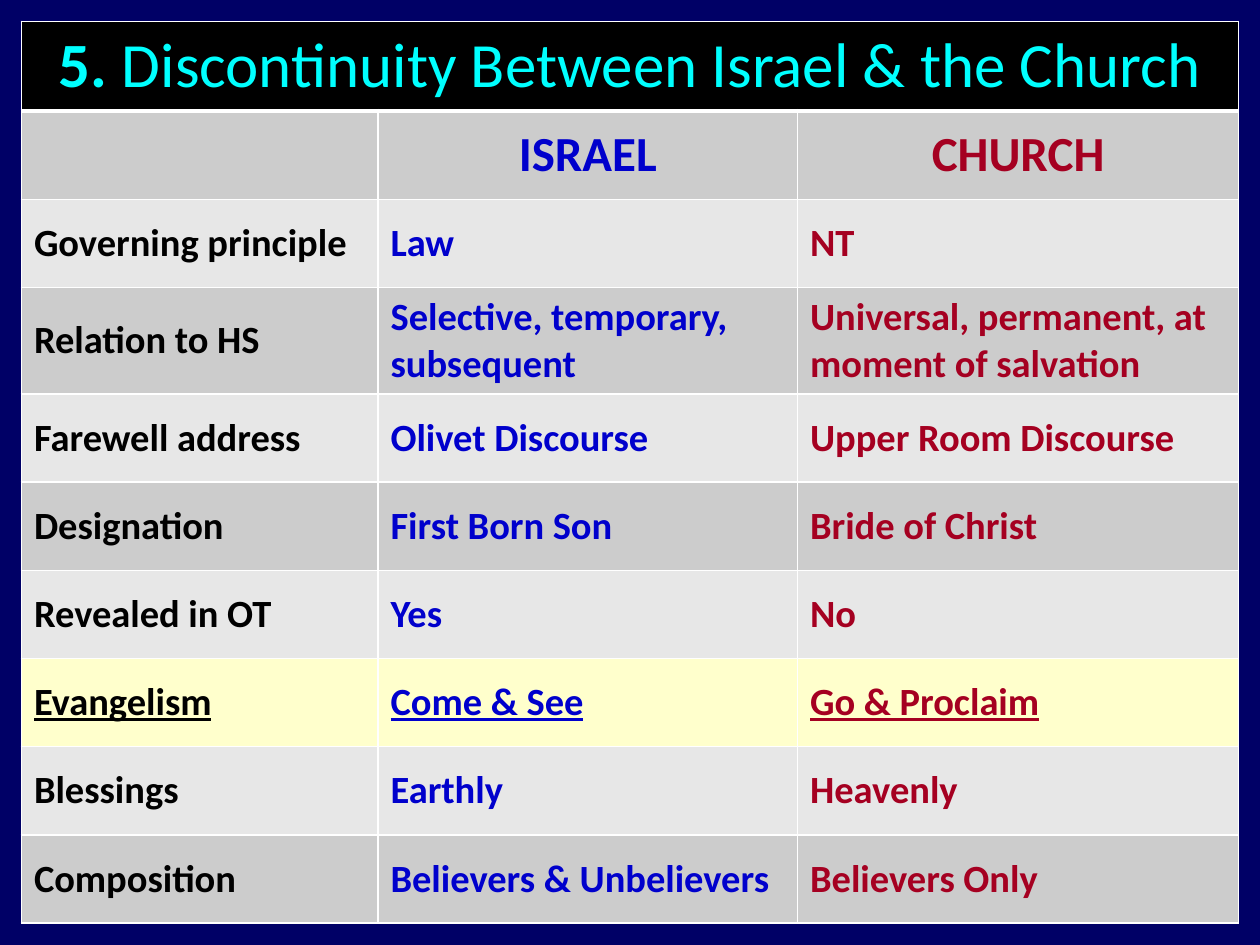
from lxml import etree
from pptx import Presentation
from pptx.dml.color import RGBColor
from pptx.enum.text import MSO_ANCHOR, PP_ALIGN
from pptx.oxml.ns import qn
from pptx.util import Inches, Pt

MIDDLE = MSO_ANCHOR.MIDDLE
CENTER = PP_ALIGN.CENTER
LEFT = PP_ALIGN.LEFT

COLORS = {
    "background": "000066",
    "title_fill": "000000",
    "title": "00FFFF",
    "border": "FFFFFF",
    "dark_row": "CCCCCC",
    "light_row": "E7E7E7",
    "highlight": "FFFFCC",
    "topic": "000000",
    "israel": "0000CC",
    "church": "A50021",
}
COLUMN_COLORS = [COLORS["topic"], COLORS["israel"], COLORS["church"]]
COLUMN_WIDTHS = [2.83, 3.33, 3.5]
ROW_HEIGHT = 0.7
MARGIN = 0.17
TITLE_RUNS = [("5. ", True), ("Discontinuity Between Israel & the Church", False)]
HIGHLIGHTED_TOPIC = "Evangelism"
ROWS = [
    ("", "ISRAEL", "CHURCH"),
    ("Governing principle", "Law", "NT"),
    ("Relation to HS", "Selective, temporary, subsequent", "Universal, permanent, at moment of salvation"),
    ("Farewell address", "Olivet Discourse", "Upper Room Discourse"),
    ("Designation", "First Born Son", "Bride of Christ"),
    ("Revealed in OT", "Yes", "No"),
    ("Evangelism", "Come & See", "Go & Proclaim"),
    ("Blessings", "Earthly", "Heavenly"),
    ("Composition", "Believers & Unbelievers", "Believers Only"),
]


def format_run(run, size, color, bold, underline=False):
    run.font.name = "Calibri"
    run.font.size = Pt(size)
    run.font.bold = bold
    run.font.underline = underline
    run.font.color.rgb = RGBColor.from_string(color)


def format_cell(cell, fill, bottom_width=1, top_width=1):
    cell.vertical_anchor = MIDDLE
    cell.fill.solid()
    cell.fill.fore_color.rgb = RGBColor.from_string(fill)
    properties = cell._tc.get_or_add_tcPr()
    widths = {"a:lnL": 1, "a:lnR": 1, "a:lnT": top_width, "a:lnB": bottom_width}
    for position, (side, width) in enumerate(widths.items()):
        line = etree.Element(qn(side), w=str(Pt(width)))
        solid = etree.SubElement(line, qn("a:solidFill"))
        etree.SubElement(solid, qn("a:srgbClr"), val=COLORS["border"])
        properties.insert(position, line)


presentation = Presentation()
presentation.slide_width = Inches(10)
presentation.slide_height = Inches(7.5)
slide = presentation.slides.add_slide(presentation.slide_layouts[6])
slide.background.fill.solid()
slide.background.fill.fore_color.rgb = RGBColor.from_string(COLORS["background"])

row_count = len(ROWS) + 1
table = slide.shapes.add_table(
    row_count, len(COLUMN_WIDTHS), Inches(MARGIN), Inches(MARGIN),
    Inches(sum(COLUMN_WIDTHS)), Inches(ROW_HEIGHT * row_count),
).table
for column, width in zip(table.columns, COLUMN_WIDTHS):
    column.width = Inches(width)
for row in table.rows:
    row.height = Inches(ROW_HEIGHT)

title_cell = table.cell(0, 0)
title_cell.merge(table.cell(0, 2))
for column_index in range(len(COLUMN_WIDTHS)):
    format_cell(table.cell(0, column_index), COLORS["title_fill"], bottom_width=3)
title_paragraph = title_cell.text_frame.paragraphs[0]
title_paragraph.alignment = CENTER
for text, bold in TITLE_RUNS:
    run = title_paragraph.add_run()
    run.text = text
    format_run(run, 36, COLORS["title"], bold)

for row_index, texts in enumerate(ROWS, start=1):
    is_heading = row_index == 1
    is_highlighted = texts[0] == HIGHLIGHTED_TOPIC
    fill = COLORS["dark_row"] if row_index % 2 else COLORS["light_row"]
    if is_highlighted:
        fill = COLORS["highlight"]
    for column_index, text in enumerate(texts):
        cell = table.cell(row_index, column_index)
        format_cell(cell, fill, top_width=3 if is_heading else 1)
        if not text:
            continue
        paragraph = cell.text_frame.paragraphs[0]
        paragraph.text = text
        paragraph.alignment = CENTER if is_heading else LEFT
        size = 28 if is_heading else 22
        format_run(paragraph.runs[0], size, COLUMN_COLORS[column_index], True, is_highlighted)

presentation.save("out.pptx")
